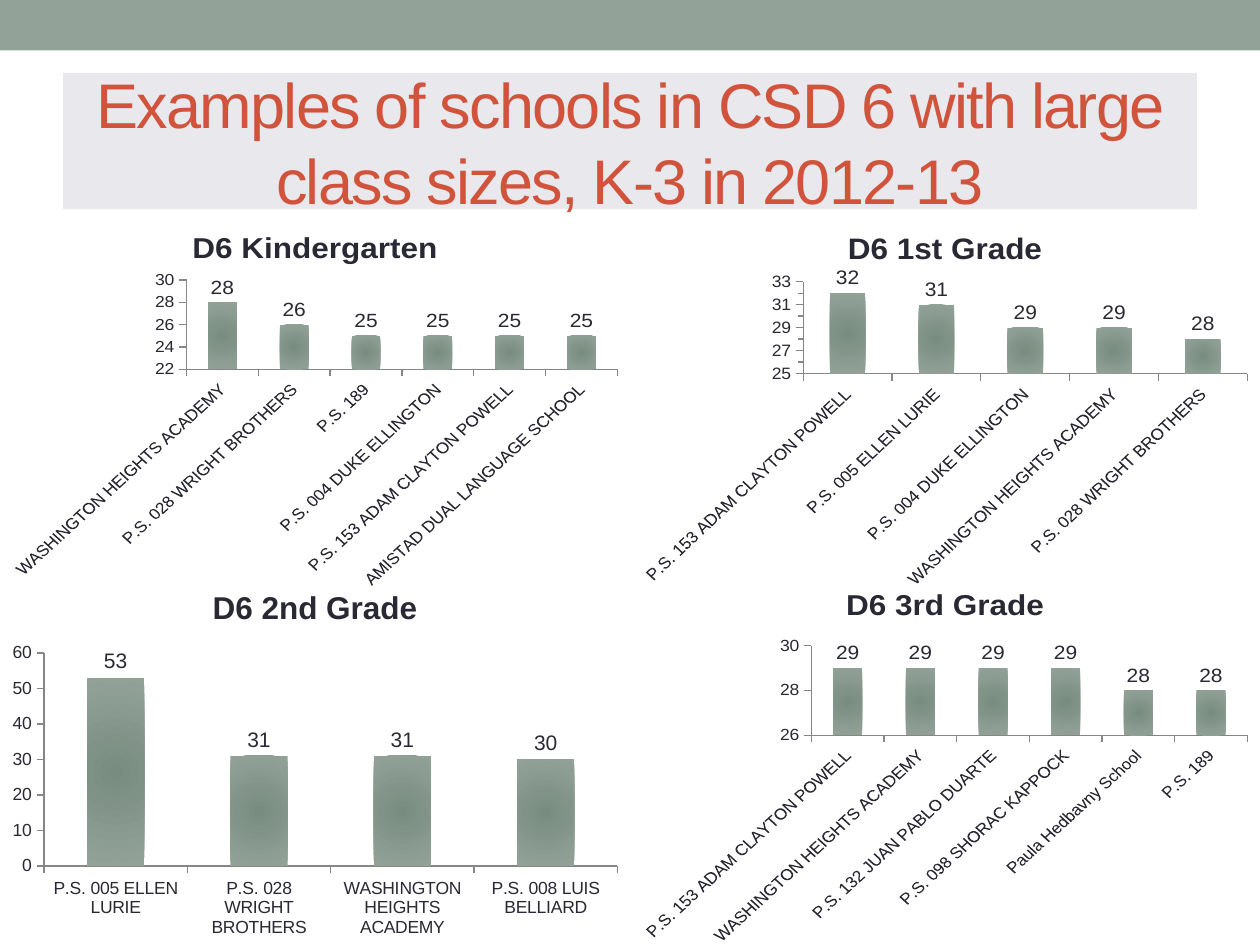
from dataclasses import dataclass

from lxml.etree import SubElement
from pptx import Presentation
from pptx.chart.data import CategoryChartData
from pptx.dml.color import RGBColor
from pptx.enum.chart import XL_CHART_TYPE, XL_LABEL_POSITION, XL_TICK_MARK
from pptx.enum.shapes import MSO_SHAPE
from pptx.enum.text import MSO_ANCHOR, MSO_AUTO_SIZE, PP_ALIGN
from pptx.oxml.ns import qn
from pptx.util import Inches, Pt


@dataclass(frozen=True)
class Theme:
    font: str = "Arial"
    sage: RGBColor = RGBColor.from_string("93A299")
    deep_sage: RGBColor = RGBColor.from_string("788C80")
    panel: RGBColor = RGBColor.from_string("E8E8ED")
    heading: RGBColor = RGBColor.from_string("D2533C")
    ink: RGBColor = RGBColor.from_string("292934")
    axis: RGBColor = RGBColor.from_string("868686")
    heading_size: int = 36
    chart_title_size: int = 18
    value_size: int = 12
    axis_size: int = 10


THEME = Theme()
WIDTH, HEIGHT = Inches(10), Inches(7.5)
HEADING = "Examples of schools in CSD 6 with large class sizes, K-3 in 2012-13"

# "cell" is (column, row); "scale" is (minimum, maximum, step).
GRADES = [
    {"title": "D6 Kindergarten", "cell": (0, 0), "scale": (22, 30, 2),
     "schools": [("WASHINGTON HEIGHTS ACADEMY", 28),
                 ("P.S. 028 WRIGHT BROTHERS", 26),
                 ("P.S. 189", 25),
                 ("P.S. 004 DUKE ELLINGTON", 25),
                 ("P.S. 153 ADAM CLAYTON POWELL", 25),
                 ("AMISTAD DUAL LANGUAGE SCHOOL", 25)]},
    {"title": "D6 1st Grade", "cell": (1, 0), "scale": (25, 33, 2),
     "minor_step": 1,
     "schools": [("P.S. 153 ADAM CLAYTON POWELL", 32),
                 ("P.S. 005 ELLEN LURIE", 31),
                 ("P.S. 004 DUKE ELLINGTON", 29),
                 ("WASHINGTON HEIGHTS ACADEMY", 29),
                 ("P.S. 028 WRIGHT BROTHERS", 28)]},
    {"title": "D6 2nd Grade", "cell": (0, 1), "scale": (0, 60, 10),
     "schools": [("P.S. 005 ELLEN LURIE", 53),
                 ("P.S. 028 WRIGHT BROTHERS", 31),
                 ("WASHINGTON HEIGHTS ACADEMY", 31),
                 ("P.S. 008 LUIS BELLIARD", 30)]},
    {"title": "D6 3rd Grade", "cell": (1, 1), "scale": (26, 30, 2),
     "schools": [("P.S. 153 ADAM CLAYTON POWELL", 29),
                 ("WASHINGTON HEIGHTS ACADEMY", 29),
                 ("P.S. 132 JUAN PABLO DUARTE", 29),
                 ("P.S. 098 SHORAC KAPPOCK", 29),
                 ("Paula Hedbavny School", 28),
                 ("P.S. 189", 28)]},
]
ROW_TOPS = (Inches(1.67), Inches(4.5))
CHART_WIDTH, CHART_HEIGHT = WIDTH // 2, Inches(3)


def style_font(font, size, color, bold=False):
    font.name, font.size, font.bold = THEME.font, Pt(size), bold
    font.color.rgb = color


def add_band(slide):
    band = slide.shapes.add_shape(MSO_SHAPE.RECTANGLE, 0, 0, WIDTH, Inches(0.4))
    band.shadow.inherit = False
    band.fill.solid()
    band.fill.fore_color.rgb = THEME.sage
    band.line.fill.background()


def set_heading(slide):
    heading = slide.shapes.title
    heading.left, heading.top = Inches(0.5), Inches(0.58)
    heading.width, heading.height = WIDTH - 2 * heading.left, Inches(1.08)
    heading.fill.solid()
    heading.fill.fore_color.rgb = THEME.panel
    frame = heading.text_frame
    frame.word_wrap, frame.auto_size = True, MSO_AUTO_SIZE.NONE
    frame.vertical_anchor = MSO_ANCHOR.MIDDLE
    paragraph = frame.paragraphs[0]
    paragraph.alignment = PP_ALIGN.CENTER
    run = paragraph.add_run()
    run.text = HEADING
    style_font(run.font, THEME.heading_size, THEME.heading)
    run.font._element.set("spc", "-100")


def fill_from_centre(fill):
    """Shade from the deep tone at the centre to the pale tone at the edges."""
    fill.gradient()
    for stop, color in zip(fill.gradient_stops, (THEME.deep_sage, THEME.sage)):
        stop.color.rgb = color
    gradient = fill._xPr.find(qn("a:gradFill"))
    gradient.remove(gradient.find(qn("a:lin")))
    shade = SubElement(gradient, qn("a:path"))
    shade.set("path", "circle")
    centre = SubElement(shade, qn("a:fillToRect"))
    for side in "ltrb":
        centre.set(side, "50000")


def style_axes(chart, grade):
    schools, sizes = chart.category_axis, chart.value_axis
    for axis in (schools, sizes):
        axis.has_major_gridlines = False
        axis.major_tick_mark = XL_TICK_MARK.OUTSIDE
        axis.minor_tick_mark = XL_TICK_MARK.NONE
        axis.format.line.color.rgb = THEME.axis
        axis.format.line.width = Pt(0.75)
        style_font(axis.tick_labels.font, THEME.axis_size, THEME.ink)
    sizes.minimum_scale, sizes.maximum_scale, sizes.major_unit = grade["scale"]
    sizes.tick_labels.number_format = "0"
    sizes.tick_labels.number_format_is_linked = False
    if "minor_step" in grade:
        sizes.minor_tick_mark = XL_TICK_MARK.OUTSIDE
        sizes.minor_unit = grade["minor_step"]


def add_grade_chart(slide, grade):
    names, sizes = zip(*grade["schools"])
    class_sizes = CategoryChartData(number_format="0")
    class_sizes.categories = names
    class_sizes.add_series("Series 1", sizes)
    column, row = grade["cell"]
    chart = slide.shapes.add_chart(
        XL_CHART_TYPE.COLUMN_CLUSTERED, column * CHART_WIDTH, ROW_TOPS[row],
        CHART_WIDTH, CHART_HEIGHT, class_sizes).chart
    style_font(chart.font, THEME.axis_size, THEME.ink)
    chart.has_legend = False
    chart.has_title = True
    run = chart.chart_title.text_frame.paragraphs[0].add_run()
    run.text = grade["title"]
    style_font(run.font, THEME.chart_title_size, THEME.ink, bold=True)
    chart.chart_title.include_in_layout = False

    bars = chart.plots[0]
    bars.gap_width, bars.vary_by_categories = 150, False
    fill_from_centre(bars.series[0].format.fill)
    bars.has_data_labels = True
    labels = bars.data_labels
    labels.show_value = True
    labels.number_format, labels.number_format_is_linked = "0", False
    labels.position = XL_LABEL_POSITION.OUTSIDE_END
    style_font(labels.font, THEME.value_size, THEME.ink)

    style_axes(chart, grade)


def main():
    deck = Presentation()
    deck.slide_width, deck.slide_height = WIDTH, HEIGHT
    slide = deck.slides.add_slide(deck.slide_layouts.get_by_name("Title Only"))
    add_band(slide)
    set_heading(slide)
    for grade in GRADES:
        add_grade_chart(slide, grade)
    deck.save("out.pptx")


if __name__ == "__main__":
    main()
